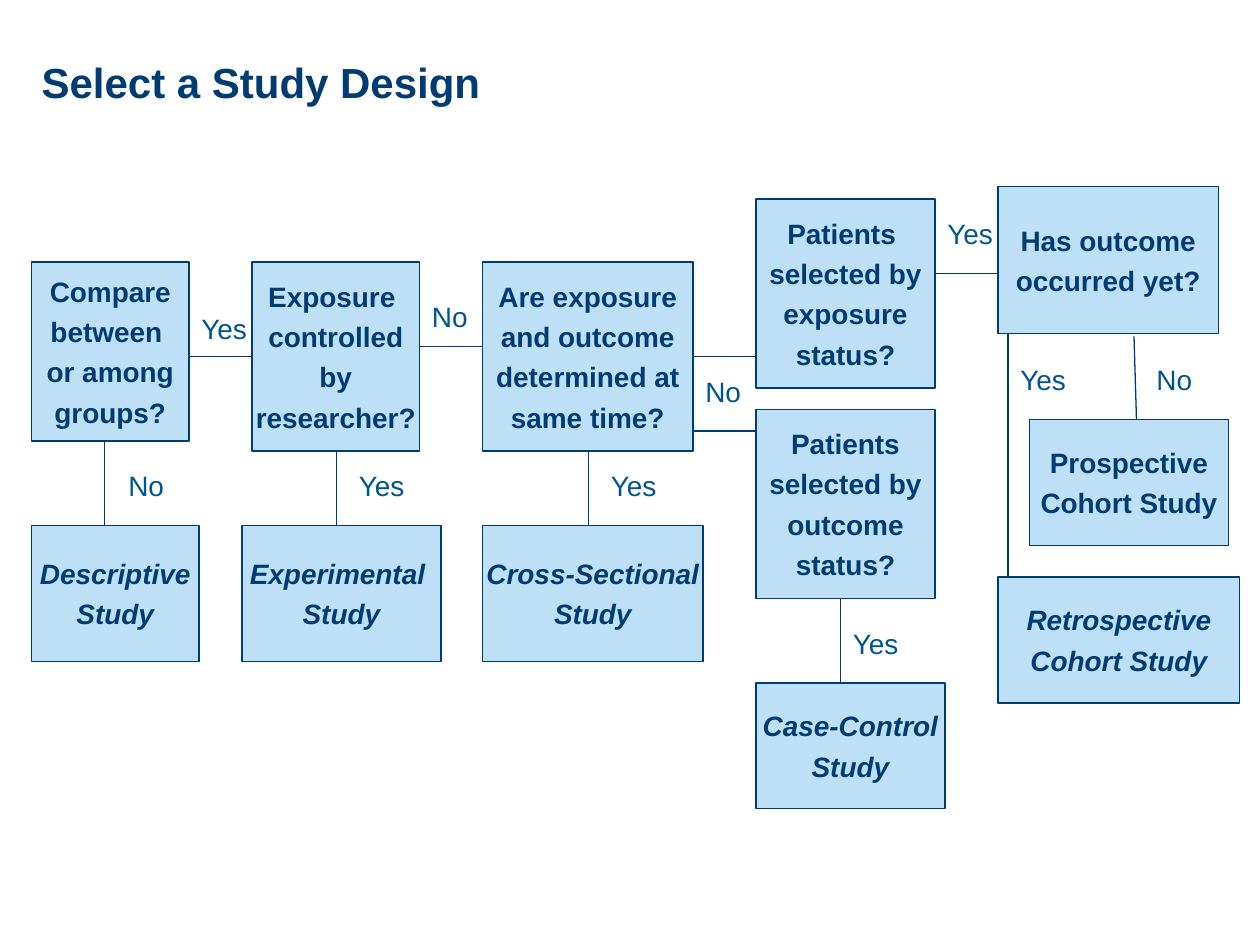
from typing import NamedTuple

import pptx
import pptx.dml.color
import pptx.enum.shapes
import pptx.enum.text
import pptx.oxml.ns
import pptx.util
from lxml import etree

Inches = pptx.util.Inches
Pt = pptx.util.Pt
PP_ALIGN = pptx.enum.text.PP_ALIGN
MSO_ANCHOR = pptx.enum.text.MSO_ANCHOR
MSO_AUTO_SIZE = pptx.enum.text.MSO_AUTO_SIZE

FONT = "Arial"
NAVY = "003B71"
BLUE = "00558C"
PALE_BLUE = "BEE0F6"
LABEL_HEIGHT = 0.37


class Step(NamedTuple):
    """A box of the flowchart; study designs are set in italics."""
    left: float
    top: float
    width: float
    height: float
    text: str
    italic: bool = False


class Link(NamedTuple):
    x1: float
    y1: float
    x2: float
    y2: float


class Answer(NamedTuple):
    left: float
    top: float
    width: float
    text: str


STEPS = [
    # Questions
    Step(0.25, 2.08, 1.25, 1.42, "Compare\nbetween \nor among\ngroups?"),
    Step(2, 2.08, 1.33, 1.5, "Exposure \ncontrolled\nby\nresearcher?"),
    Step(3.83, 2.08, 1.67, 1.5, "Are exposure\nand outcome\ndetermined at\nsame time?"),
    Step(6, 1.58, 1.42, 1.5, "Patients \nselected by\nexposure\nstatus?"),
    Step(6, 3.25, 1.42, 1.5, "Patients\nselected by\noutcome\nstatus?"),
    Step(7.92, 1.48, 1.75, 1.17, "Has outcome\noccurred yet?"),
    # Study designs
    Step(0.25, 4.17, 1.33, 1.08, "Descriptive\nStudy", True),
    Step(1.92, 4.17, 1.58, 1.08, "Experimental \nStudy", True),
    Step(3.83, 4.17, 1.75, 1.08, "Cross-Sectional\nStudy", True),
    Step(6, 5.42, 1.5, 1, "Case-Control\nStudy", True),
    Step(8.17, 3.33, 1.58, 1, "Prospective\nCohort Study"),
    Step(7.92, 4.58, 1.92, 1, "Retrospective\nCohort Study", True),
]

LINKS = [
    # Across, from question to question
    Link(1.5, 2.83, 2, 2.83),
    Link(3.33, 2.75, 3.83, 2.75),
    Link(5.5, 2.83, 6, 2.83),
    Link(5.5, 3.42, 6, 3.42),
    Link(7.42, 2.17, 7.92, 2.17),
    # Down, from question to study design
    Link(0.83, 3.5, 0.83, 4.17),
    Link(2.67, 3.58, 2.67, 4.17),
    Link(4.67, 3.58, 4.67, 4.17),
    Link(6.67, 4.75, 6.67, 5.42),
    Link(9, 2.67, 9.02, 3.33),
    Link(8, 2.65, 8, 4.58),
]

ANSWERS = [
    Answer(1.5, 2.42, 0.58, "Yes"),
    Answer(0.92, 3.67, 0.58, "No"),
    Answer(2.75, 3.67, 0.75, "Yes"),
    Answer(3.33, 2.33, 0.92, "No"),
    Answer(4.75, 3.67, 0.67, "Yes"),
    Answer(6.67, 4.92, 0.75, "Yes"),
    Answer(5.5, 2.92, 0.67, "No"),
    Answer(9.08, 2.83, 0.58, "No"),
    Answer(8, 2.83, 0.67, "Yes"),
    Answer(7.42, 1.67, 0.67, "Yes"),
]


def rgb(value: str) -> pptx.dml.color.RGBColor:
    return pptx.dml.color.RGBColor.from_string(value)


def style_text(frame, size: float, color: str, bold=False, italic=False) -> None:
    for paragraph in frame.paragraphs:
        for run in paragraph.runs:
            run.font.name = FONT
            run.font.size = Pt(size)
            run.font.bold = bold
            run.font.italic = italic
            run.font.color.rgb = rgb(color)


def style_line(line) -> None:
    line.color.rgb = rgb(NAVY)
    line.width = Pt(0.75)


def set_title(title, text: str) -> None:
    title.left, title.top = Inches(0.33), Inches(0.51)
    title.width, title.height = Inches(9.35), Inches(0.83)
    frame = title.text_frame
    frame.text = text
    frame.auto_size = MSO_AUTO_SIZE.NONE
    frame.vertical_anchor = MSO_ANCHOR.TOP
    frame.margin_left = frame.margin_right = 0
    frame.margin_top = frame.margin_bottom = 0
    frame.paragraphs[0].alignment = PP_ALIGN.LEFT
    frame.paragraphs[0].line_spacing = 0.85
    style_text(frame, 24, NAVY, bold=True)


def draw_link(slide, link: Link) -> None:
    connector = slide.shapes.add_connector(
        pptx.enum.shapes.MSO_CONNECTOR.STRAIGHT, *map(Inches, link))
    style_line(connector.line)
    etree.SubElement(connector._element.spPr, pptx.oxml.ns.qn("a:effectLst"))


def draw_step(slide, step: Step) -> None:
    box = slide.shapes.add_shape(
        pptx.enum.shapes.MSO_SHAPE.RECTANGLE, *map(Inches, step[:4]))
    box.shadow.inherit = False
    box.fill.solid()
    box.fill.fore_color.rgb = rgb(PALE_BLUE)
    style_line(box.line)
    frame = box.text_frame
    frame.text = step.text
    frame.word_wrap = False
    frame.vertical_anchor = MSO_ANCHOR.MIDDLE
    for index, paragraph in enumerate(frame.paragraphs):
        paragraph.alignment = PP_ALIGN.CENTER
        paragraph.space_before = Pt(3.9 if index else 0)
    style_text(frame, 16, NAVY, bold=True, italic=step.italic)


def draw_answer(slide, answer: Answer) -> None:
    label = slide.shapes.add_textbox(
        Inches(answer.left), Inches(answer.top),
        Inches(answer.width), Inches(LABEL_HEIGHT))
    frame = label.text_frame
    frame.text = answer.text
    frame.word_wrap = True
    frame.auto_size = MSO_AUTO_SIZE.SHAPE_TO_FIT_TEXT
    style_text(frame, 16, BLUE)


def main() -> None:
    deck = pptx.Presentation()
    deck.slide_width, deck.slide_height = Inches(10), Inches(7.5)
    slide = deck.slides.add_slide(deck.slide_layouts.get_by_name("Title Only"))
    set_title(slide.shapes.title, "Select a Study Design")

    # Flowchart: lines at the back, then boxes, then answers
    for link in LINKS:
        draw_link(slide, link)
    for step in STEPS:
        draw_step(slide, step)
    for answer in ANSWERS:
        draw_answer(slide, answer)

    deck.save("out.pptx")


if __name__ == "__main__":
    main()
